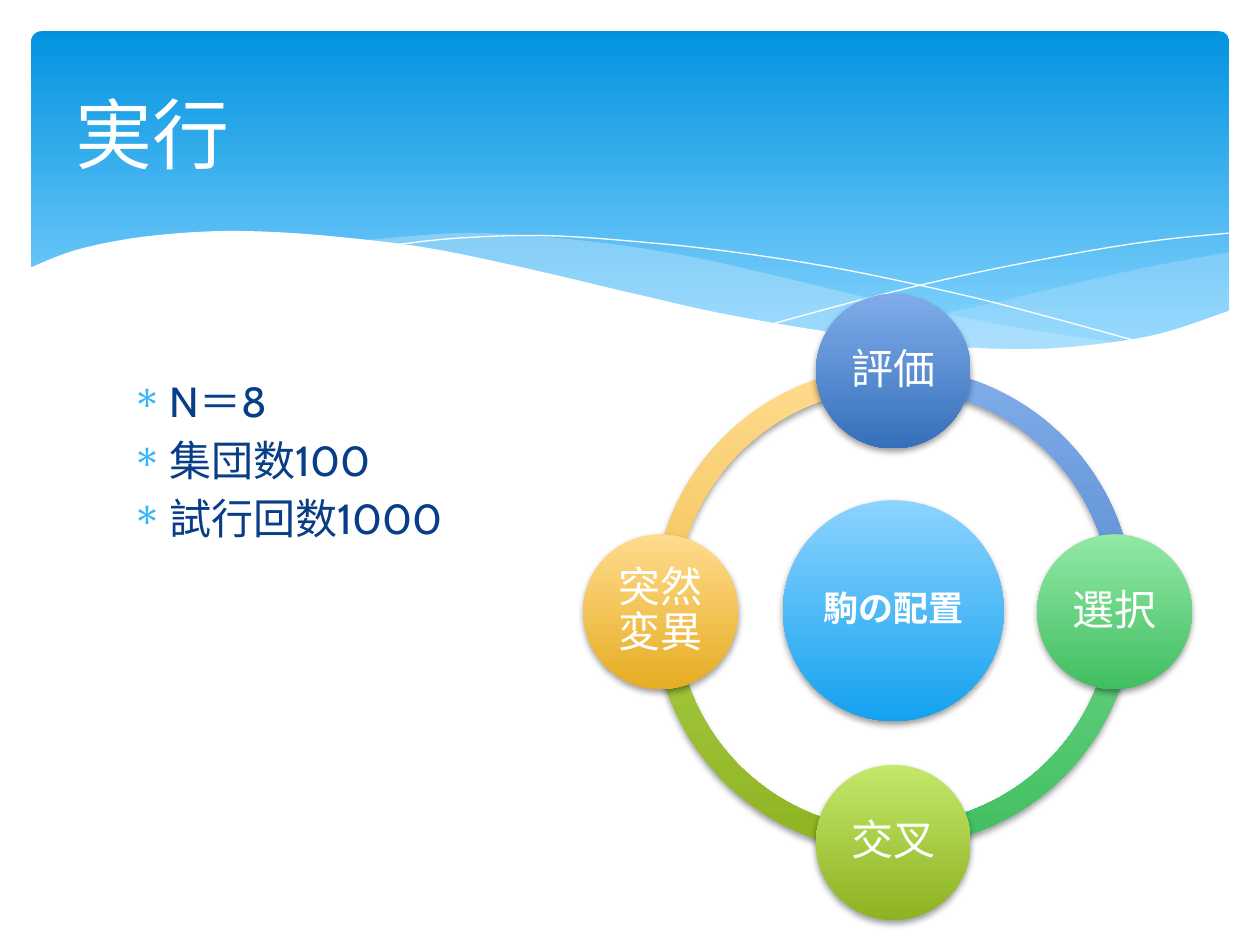
"""Builds the slide on running the search, with its cycle of four steps."""
import pptx
import pptx.util
import pptx.dml.color
import pptx.enum.shapes
import pptx.enum.text
import pptx.oxml
import pptx.oxml.ns

Cm, Pt = pptx.util.Cm, pptx.util.Pt
RGB = pptx.dml.color.RGBColor.from_string
SHAPE = pptx.enum.shapes.MSO_SHAPE
TEXT = pptx.enum.text

THEME = {
    "font": "Cabin", "white": "FFFFFF", "ink": "073E87", "mark": "31B6FD",
    "veil": "C6E7FC", "band": ("0293E0", "83D3FE"), "hub": ("8CD3FF", "14A2EF"),
    "blue": ("80ACEA", "3570BA"), "green": ("92E8A6", "41BF60"),
    "lime": ("C3E86A", "8DB222"), "gold": ("FFDB8E", "E6AD22"),
    "title": 44, "body": 24, "core": 20,
}

TITLE = "実行"
FACTS = ["N＝8", "集団数100", "試行回数1000"]
HUB = ("駒の配置", "hub", 18.01, 12.31)
STEPS = [
    ("評価", "blue", 18.01, 7.48),
    ("選択", "green", 22.47, 12.33),
    ("交叉", "lime", 18.01, 16.98),
    ("突然変異", "gold", 13.32, 12.33),
]
RING = 9.68
TOPS = [7.39, 7.39, 7.49, 7.39]

WAVES = [
    ("veil", 29, [
        [(24.79, 5.08), (23.01, 5.41), (21.13, 5.84), (19.13, 6.3), (16.79, 6.73)],
        [(16.79, 6.73), (18.26, 6.91), (19.53, 7.04), (20.93, 7.05), (22.15, 6.96),
         (23.39, 6.73), (24.79, 6.27)]]),
    ("veil", 40, [
        [(22.68, 6.93), (20.5, 6.6), (17.93, 6.1), (15.98, 5.64), (14.1, 5.21),
         (12.42, 4.93), (10.67, 4.75), (9.17, 4.7), (7.26, 4.85)],
        [(7.26, 4.85), (9.19, 5.16), (11.4, 5.64), (13.46, 6.1), (15.27, 6.48),
         (17.27, 6.81), (19, 7.01), (20.5, 7.06), (21.77, 7.04), (22.68, 6.93)]]),
    (None, 100, [
        [(7.85, 4.95), (9.22, 4.8), (11, 4.75), (12.95, 4.88), (14.78, 5.08),
         (16.89, 5.41), (19.3, 5.92), (21.11, 6.38), (23.04, 6.91)]]),
    (None, 100, [
        [(15.57, 6.53), (17.65, 5.97), (19.71, 5.49), (22, 5.05), (23.47, 4.83),
         (24.77, 4.7)]]),
    ("white", 100, [
        [(24.82, 6.25), (23.37, 6.73), (21.92, 6.96), (20.55, 7.04), (18.9, 6.96),
         (16.97, 6.73), (14.71, 6.35), (12.78, 5.92), (10.62, 5.41), (8.64, 5),
         (6.88, 4.78), (5.36, 4.67), (4.09, 4.67), (2.69, 4.8), (1.5, 5.05),
         (0.58, 5.41)],
        [(0.58, 8.36), (24.82, 8.36)]]),
]


def node(tag, **attrs):
    """Makes one drawing element."""
    item = pptx.oxml.parse_xml(f"<a:{tag} {pptx.oxml.ns.nsdecls('a')}/>")
    for key, val in attrs.items():
        item.set(key, str(val))
    return item


def curve(pts, steps=6):
    """Gives points of a smooth curve through pts."""
    ends = [pts[0], *pts, pts[-1]]
    out = [pts[0]]
    for a, b, c, d in zip(ends, ends[1:], ends[2:], ends[3:]):
        for i in range(1, steps + 1):
            t = i / steps
            out.append(tuple(
                q + t / 2 * (r - p + t * (2*p - 5*q + 4*r - s + t * (3*q - p - 3*r + s)))
                for p, q, r, s in zip(a, b, c, d)))
    return out


def wave(slide, tone, alpha, edges):
    """Draws a filled wave, or a thin white line if there is no tone."""
    pts = [(Cm(x), Cm(y)) for edge in edges for x, y in curve(edge)]
    pen = slide.shapes.build_freeform(*pts[0])
    pen.add_line_segments(pts[1:], close=tone is not None)
    form = pen.convert_to_shape()
    form.shadow.inherit = False
    if tone is None:
        form.fill.background()
        form.line.color.rgb = RGB(THEME["white"])
        form.line.width = Pt(0)
        return
    form.line.fill.background()
    form.fill.solid()
    form.fill.fore_color.rgb = RGB(THEME[tone])
    if alpha < 100:
        tint = form._element.spPr.find(".//" + pptx.oxml.ns.qn("a:srgbClr"))
        tint.append(node("alpha", val=alpha * 1000))


def block(slide, kind, box, tone, stop=1, shade=True):
    """Draws a preset shape with a top-down gradient and a soft shadow."""
    form = slide.shapes.add_shape(kind, *map(Cm, box))
    form.line.fill.background()
    form.fill.gradient()
    form.fill.gradient_angle = 270
    for mark, hue, pos in zip(form.fill.gradient_stops, THEME[tone], (0, stop)):
        mark.color.rgb = RGB(hue)
        mark.position = pos
    form.shadow.inherit = False
    if shade:
        cast = node("outerShdw", blurRad=Pt(4), dist=Pt(2), dir=5400000, rotWithShape=0)
        hue = node("srgbClr", val="000000")
        hue.append(node("alpha", val=38000))
        cast.append(hue)
        form._element.spPr.find(pptx.oxml.ns.qn("a:effectLst")).append(cast)
    return form


def write(par, words, size, tone="white", bold=False):
    """Adds one run to a paragraph."""
    run = par.add_run()
    run.text = words
    run.font.name = THEME["font"]
    run.font.size = Pt(THEME[size])
    run.font.bold = bold
    run.font.color.rgb = RGB(THEME[tone])


def disc(slide, step, size, type_size, bold=False):
    """Draws a labelled circle about its centre."""
    words, tone, x, y = step
    form = block(slide, SHAPE.OVAL, (x - size / 2, y - size / 2, size, size), tone)
    frame = form.text_frame
    frame.word_wrap = True
    frame.vertical_anchor = TEXT.MSO_ANCHOR.MIDDLE
    frame.margin_left = frame.margin_right = Cm(0.08)
    frame.margin_top = frame.margin_bottom = Cm(0.08)
    par = frame.paragraphs[0]
    par.alignment = TEXT.PP_ALIGN.CENTER
    par.line_spacing = 0.9
    write(par, words, type_size, bold=bold)


def panel(slide, box):
    """Adds a wrapping text box and gives its frame."""
    frame = slide.shapes.add_textbox(*map(Cm, box)).text_frame
    frame.word_wrap = True
    return frame


def main():
    """Builds and saves the deck."""
    deck = pptx.Presentation()
    deck.slide_width, deck.slide_height = Cm(25.4), Cm(19.05)
    slide = deck.slides.add_slide(deck.slide_layouts[6])

    band = block(slide, SHAPE.ROUNDED_RECTANGLE, (0.63, 0.63, 24.15, 6.86), "band", 0.9, False)
    band.adjustments[0] = 0.03
    for tone, alpha, edges in WAVES:
        wave(slide, tone, alpha, edges)

    frame = panel(slide, (2.41, 7.44, 20.57, 9.58))
    for i, fact in enumerate(FACTS):
        par = frame.add_paragraph() if i else frame.paragraphs[0]
        par.space_before = Pt(THEME["body"] * 0.2)
        props = par._p.get_or_add_pPr()
        props.set("marL", str(Cm(0.76)))
        props.set("indent", str(-Cm(0.76)))
        hue = node("buClr")
        hue.append(node("srgbClr", val=THEME["mark"]))
        props.extend([hue, node("buChar", char="∗")])
        write(par, fact, "body", "ink")

    frame = panel(slide, (1.27, 0.94, 22.86, 3.48))
    frame.vertical_anchor = TEXT.MSO_ANCHOR.MIDDLE
    write(frame.paragraphs[0], TITLE, "title")

    for i, (step, top) in enumerate(zip(STEPS, TOPS)):
        arc = block(slide, SHAPE.BLOCK_ARC, (13.18, top, RING, RING), step[1])
        start = (162 + 54 * i) % 216
        for k, val in enumerate((start, (start + 54) % 216, 0.046)):
            arc.adjustments[k] = val
    for step in STEPS:
        disc(slide, step, 3.12, "body")
    disc(slide, HUB, 4.45, "core", True)
    deck.save("out.pptx")


if __name__ == "__main__":
    main()
